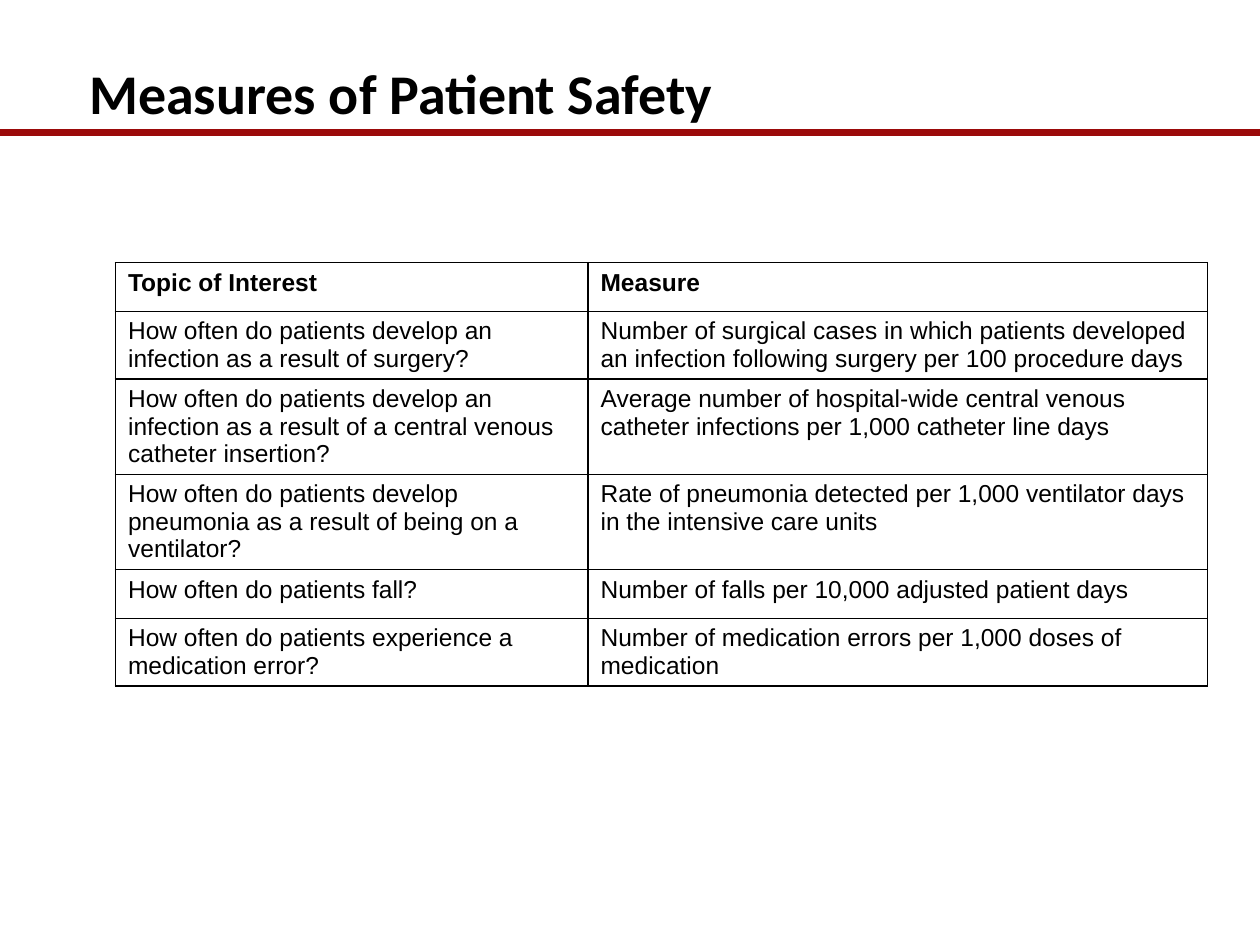
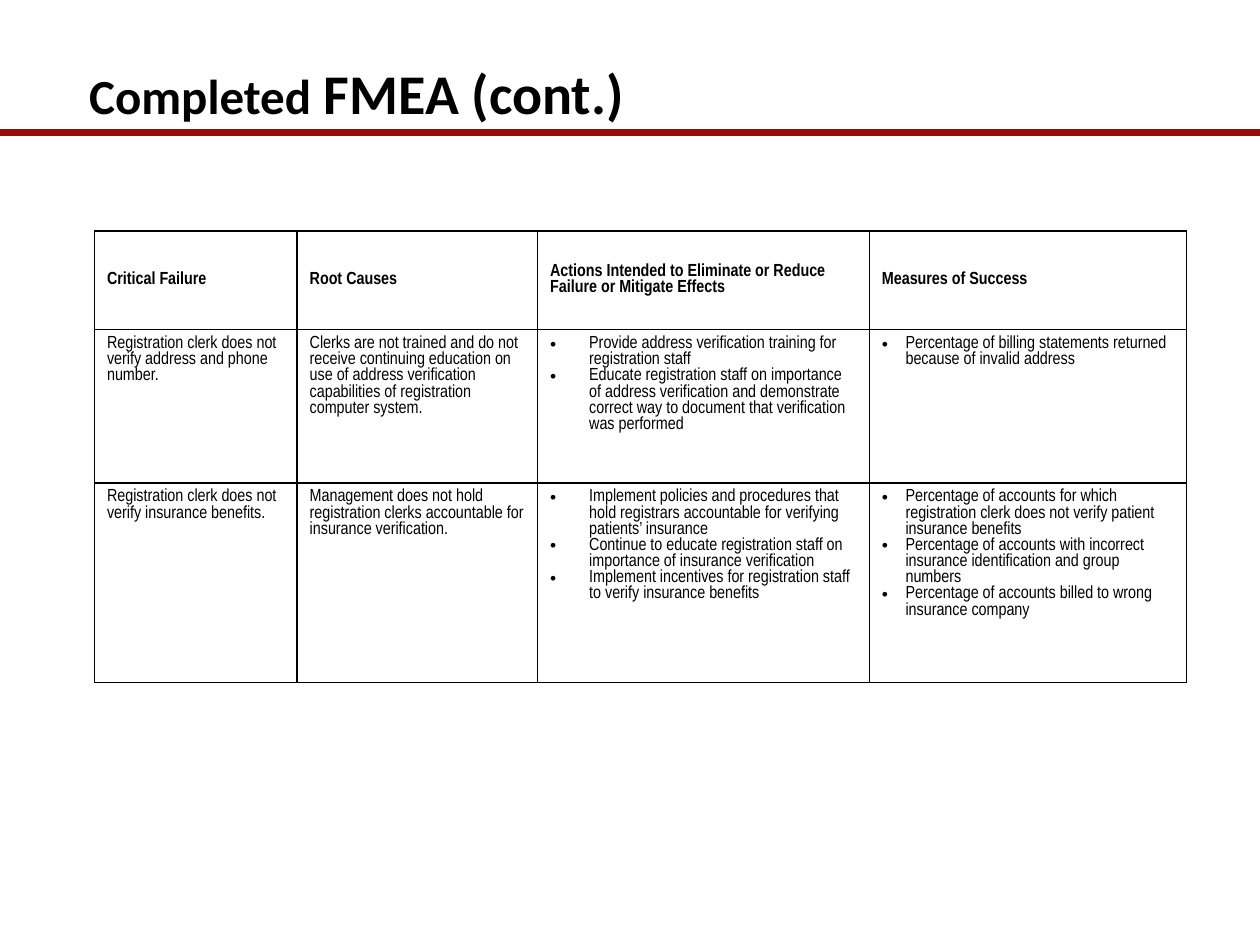
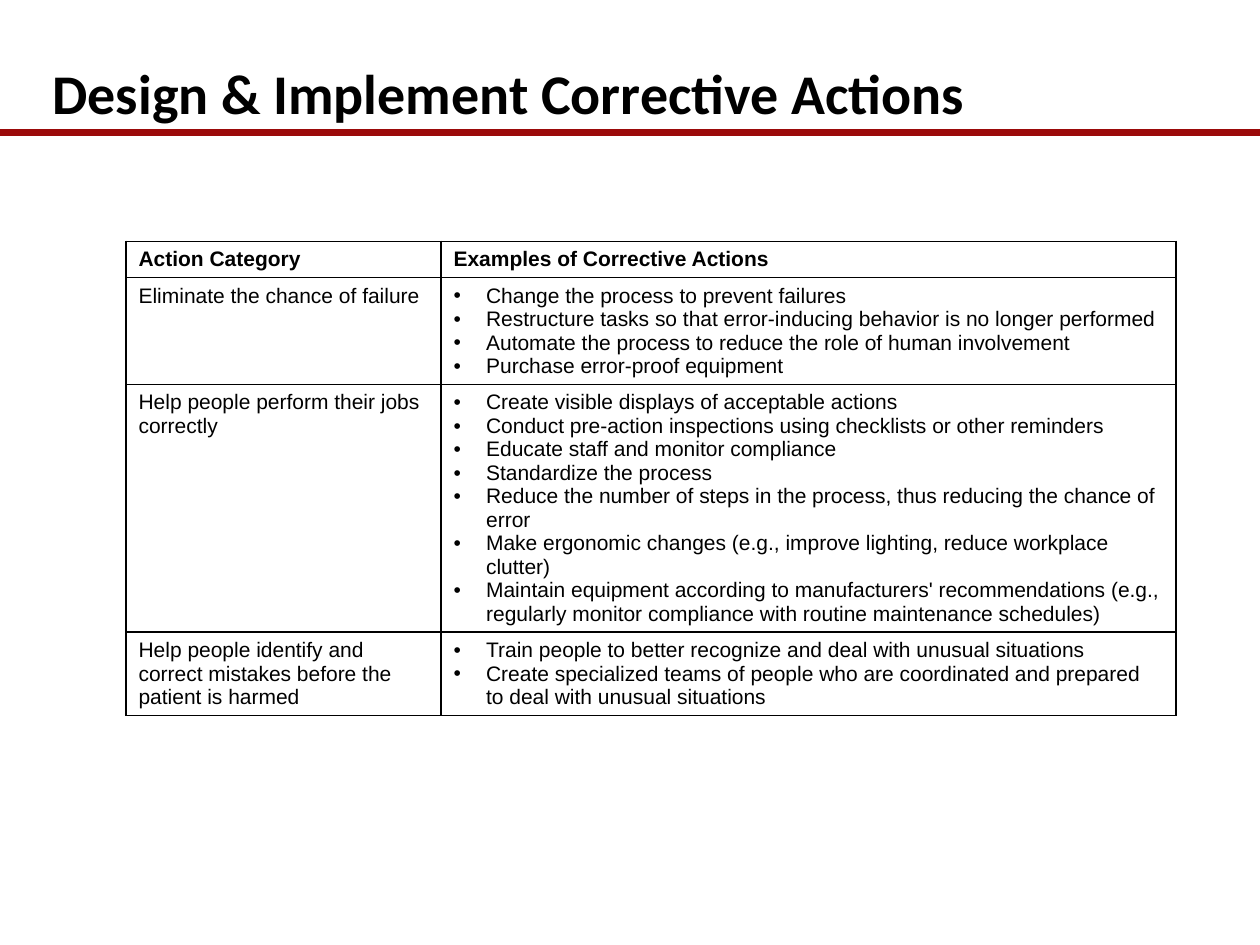
import pptx
import pptx.dml.color
import pptx.enum.shapes
import pptx.enum.text
import pptx.oxml.ns
import pptx.util
from lxml import etree

COLORS = {"ink": "000000", "rule": "9B0A0A"}
TITLE_FONT = "Calibri"
TITLE_SIZE = 32
COLUMNS, ROWS = 120, 90  # page grid
HEADER_HANG = 5.2  # grid columns
PAGE_WIDTH, PAGE_HEIGHT = pptx.util.Inches(10), pptx.util.Inches(7.5)
ANCHOR = pptx.enum.text.MSO_ANCHOR


def across(columns):
    return round(PAGE_WIDTH * columns / COLUMNS)


def down(rows):
    return round(PAGE_HEIGHT * rows / ROWS)


def color(name):
    return pptx.dml.color.RGBColor.from_string(COLORS[name])


def add_child(parent, tag, **attributes):
    return etree.SubElement(parent, pptx.oxml.ns.qn(tag), attributes)


def style_font(font, name, size, bold):
    font.name, font.size, font.bold = name, pptx.util.Pt(size), bold
    font.color.rgb = color("ink")


# Title and the rule beneath it
def add_page(deck, title_spans, left=7.3, width=105.5):
    page = deck.slides.add_slide(deck.slide_layouts[5])
    rule = page.shapes.add_connector(
        pptx.enum.shapes.MSO_CONNECTOR.STRAIGHT, 0, down(12.6), PAGE_WIDTH, down(12.6))
    rule.line.color.rgb = color("rule")
    rule.line.width = pptx.util.Pt(3.75)
    add_child(rule._element.spPr, "a:effectLst")

    title = page.shapes.title
    title.left, title.top = across(left), down(5)
    title.width, title.height = across(width), down(11.9)
    frame = title.text_frame
    frame.word_wrap = True
    frame.auto_size = pptx.enum.text.MSO_AUTO_SIZE.NONE
    frame.vertical_anchor = ANCHOR.TOP
    paragraph = frame.paragraphs[0]
    paragraph.alignment = pptx.enum.text.PP_ALIGN.LEFT
    for text, size in title_spans:
        span = paragraph.add_run()
        span.text = text
        style_font(span.font, TITLE_FONT, size, True)
    return page


def hang(paragraph, columns, bullet=False):
    properties = paragraph._p.get_or_add_pPr()
    properties.set("marL", str(across(columns)))
    properties.set("indent", str(-across(columns)))
    if bullet:
        add_child(properties, "a:buFont", typeface="Arial")
        add_child(properties, "a:buChar", char="•")


def draw_borders(cell):
    properties = cell._tc.get_or_add_tcPr()
    for side in ("a:lnL", "a:lnR", "a:lnT", "a:lnB"):
        line = add_child(properties, side, w=str(pptx.util.Pt(1)))
        add_child(add_child(line, "a:solidFill"), "a:srgbClr", val=COLORS["ink"])


# A cell holds plain text, or a list of bullet points
def fill_cell(cell, content, font, size, header, bullet_hang):
    bulleted = isinstance(content, list)
    draw_borders(cell)
    cell.fill.background()
    cell.text_frame.text = "\n".join(content) if bulleted else content
    for paragraph in cell.text_frame.paragraphs:
        if header:
            hang(paragraph, HEADER_HANG)
        elif bulleted:
            hang(paragraph, bullet_hang, bullet=True)
        style_font(paragraph.font, font, size, header)


def add_grid(page, left, top, widths, heights, content, size, font="Arial",
             bullet_hangs=None, header_anchor=ANCHOR.TOP):
    table = page.shapes.add_table(
        len(heights), len(widths), across(left), down(top),
        across(sum(widths)), down(sum(heights))).table
    table.first_row = table.horz_banding = False
    for column, width in zip(table.columns, widths):
        column.width = across(width)
    bullet_hangs = bullet_hangs or [0] * len(widths)
    for index, (row, height, texts) in enumerate(zip(table.rows, heights, content)):
        row.height = down(height)
        for cell, text, bullet_hang in zip(row.cells, texts, bullet_hangs):
            fill_cell(cell, text, font, size, index == 0, bullet_hang)
            if index == 0:
                cell.vertical_anchor = header_anchor


SAFETY_MEASURES = [
    ("Topic of Interest", "Measure"),
    ("How often do patients develop an infection as a result of surgery?",
     "Number of surgical cases in which patients developed an infection following "
     "surgery per 100 procedure days"),
    ("How often do patients develop an infection as a result of a central venous "
     "catheter insertion?",
     "Average number of hospital-wide central venous catheter infections per 1,000 "
     "catheter line days"),
    ("How often do patients develop pneumonia as a result of being on a ventilator?",
     "Rate of pneumonia detected per 1,000 ventilator days in the intensive care units"),
    ("How often do patients fall?", "Number of falls per 10,000 adjusted patient days"),
    ("How often do patients experience a medication error?",
     "Number of medication errors per 1,000 doses of medication"),
]

FAILURE_ANALYSIS = [
    ("Critical Failure", "Root Causes",
     "Actions Intended to Eliminate or Reduce\nFailure or Mitigate Effects",
     "Measures of Success"),
    ("Registration clerk does not verify address and phone number.",
     "Clerks are not trained and do not receive continuing education on use of address "
     "verification capabilities of registration computer system.",
     ["Provide address verification training for registration staff",
      "Educate registration staff on importance of address verification and demonstrate "
      "correct way to document that verification was performed"],
     ["Percentage of billing statements returned because of invalid address"]),
    ("Registration clerk does not verify insurance benefits.",
     "Management does not hold registration clerks accountable for insurance verification.",
     ["Implement policies and procedures that hold registrars accountable for verifying "
      "patients’ insurance",
      "Continue to educate registration staff on importance of insurance verification",
      "Implement incentives for registration staff to verify insurance benefits"],
     ["Percentage of accounts for which registration clerk does not verify patient "
      "insurance benefits",
      "Percentage of accounts with incorrect insurance identification and group numbers",
      "Percentage of accounts billed to wrong insurance company"]),
]

CORRECTIVE_ACTIONS = [
    ("Action Category", "Examples of Corrective Actions"),
    ("Eliminate the chance of failure",
     ["Change the process to prevent failures",
      "Restructure tasks so that error-inducing behavior is no longer performed",
      "Automate the process to reduce the role of human involvement",
      "Purchase error-proof equipment"]),
    ("Help people perform their jobs correctly",
     ["Create visible displays of acceptable actions",
      "Conduct pre-action inspections using checklists or other reminders",
      "Educate staff and monitor compliance",
      "Standardize the process",
      "Reduce the number of steps in the process, thus reducing the chance of error",
      "Make ergonomic changes (e.g., improve lighting, reduce workplace clutter)",
      "Maintain equipment according to manufacturers' recommendations (e.g., regularly "
      "monitor compliance with routine maintenance schedules)"]),
    ("Help people identify and correct mistakes before the patient is harmed",
     ["Train people to better recognize and deal with unusual situations",
      "Create specialized teams of people who are coordinated and prepared to deal with "
      "unusual situations"]),
]


def main():
    deck = pptx.Presentation()
    deck.slide_width, deck.slide_height = PAGE_WIDTH, PAGE_HEIGHT

    page = add_page(deck, [("Measures of Patient Safety", TITLE_SIZE)])
    add_grid(page, 11, 25, [45, 59], [4.65, 6.4, 7, 7, 4.65, 6.4], SAFETY_MEASURES, 14)

    page = add_page(deck, [("Completed", 28), (" FMEA (cont.)", TITLE_SIZE)])
    add_grid(page, 9, 22, [19.3, 22.9, 31.6, 30.2], [9.4, 14.6, 19], FAILURE_ANALYSIS, 10,
             font="Arial Narrow", bullet_hangs=[0, 0, 3.72, 2.25],
             header_anchor=ANCHOR.MIDDLE)

    page = add_page(deck, [("Design & Implement Corrective Actions", TITLE_SIZE)],
                    left=3.8, width=112.4)
    add_grid(page, 12, 23, [30, 70], [3.4, 10, 21, 7.8], CORRECTIVE_ACTIONS, 12,
             bullet_hangs=[0, 3.1])

    deck.save("out.pptx")


if __name__ == "__main__":
    main()
